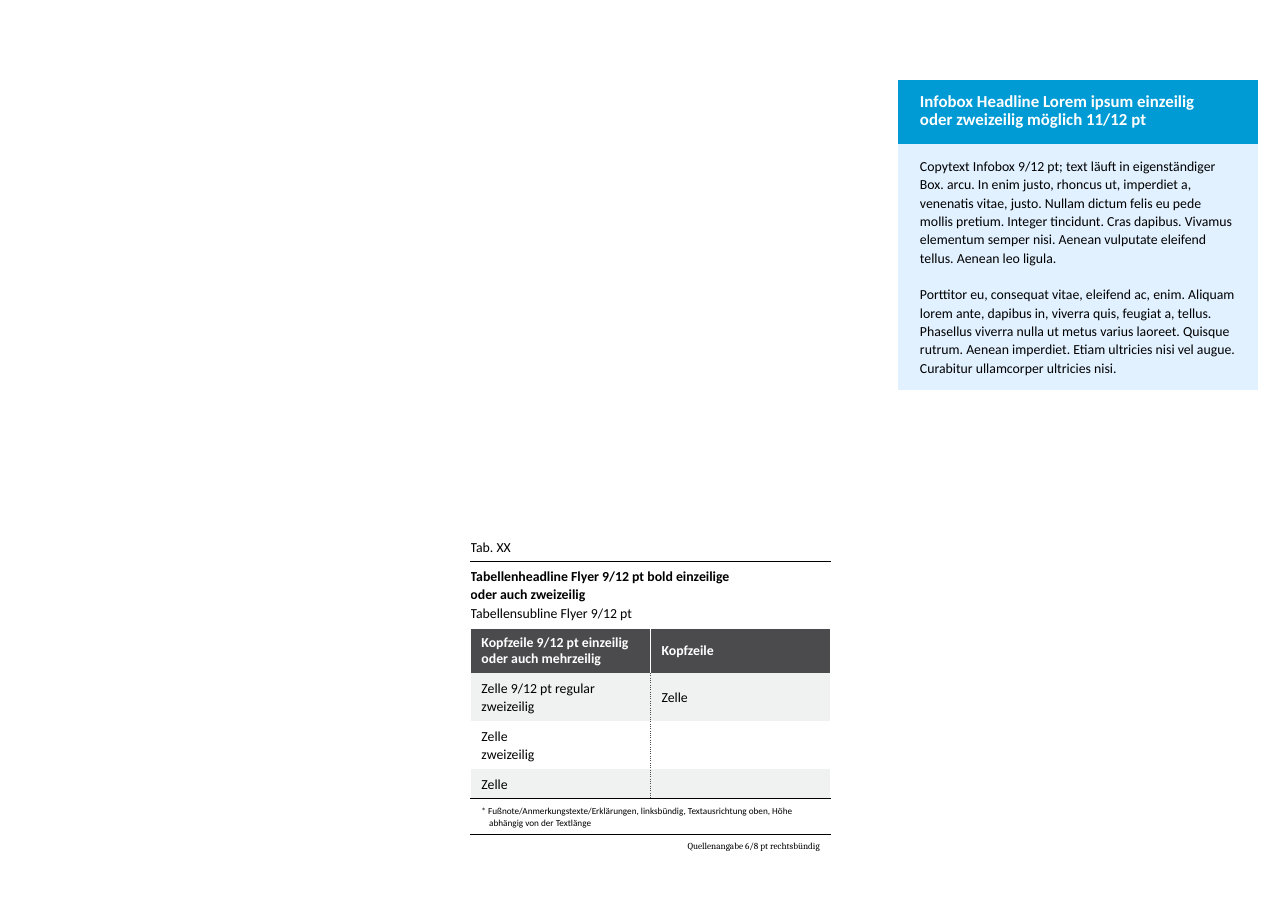
from lxml import etree
from pptx import Presentation
from pptx.dml.color import RGBColor
from pptx.enum.text import MSO_ANCHOR as Anchor, PP_ALIGN as Align
from pptx.oxml.ns import qn
from pptx.util import Inches, Pt

COLORS = {
    "black": "000000", "white": "FFFFFF", "dark": "4B4B4D", "band": "F0F1F1",
    "blue": "009BD5", "pale": "E1F1FF",
}
WHITE = ("white", 1, "solid")
RULE = ("black", 1, "solid")
THIN = ("black", 0.5, "solid")
HEAD = ("white", 0.75, "solid")
DOTS = ("dark", 0.5, "dot")


def style_cell(cell, fill=None, borders=None, insets=(0.1, 0.05), anchor=Anchor.TOP):
    cell.margin_left = cell.margin_right = Inches(insets[0])
    cell.margin_top = cell.margin_bottom = Inches(insets[1])
    cell.vertical_anchor = anchor
    properties = cell._tc.get_or_add_tcPr()
    for side in "LRTB":
        line = etree.SubElement(properties, qn(f"a:ln{side}"))
        if side in (borders or {}):
            color, width, dash = borders[side]
            line.set("w", str(Pt(width)))
            solid = etree.SubElement(line, qn("a:solidFill"))
            etree.SubElement(solid, qn("a:srgbClr"), val=COLORS[color])
            etree.SubElement(line, qn("a:prstDash"), val="sysDot" if dash == "dot" else dash)
        else:
            etree.SubElement(line, qn("a:noFill"))
    if fill:
        cell.fill.solid()
        cell.fill.fore_color.rgb = RGBColor.from_string(COLORS[fill])
    else:
        cell.fill.background()


def write_cell(cell, lines, size=9, color="black", bold=0, spacing=12, font="Calibri", gap=0):
    frame = cell.text_frame
    for index, text in enumerate(lines):
        para = frame.add_paragraph() if index else frame.paragraphs[0]
        if spacing:
            para.line_spacing = Pt(spacing)
        if index < len(lines) - 1:
            para.space_after = Pt(gap)
        if not text:
            etree.SubElement(para._p, qn("a:endParaRPr"), sz=str(size * 100))
            continue
        span = para.add_run()
        span.text = text
        span.font.name = font
        span.font.size = Pt(size)
        span.font.bold = index < bold
        span.font.color.rgb = RGBColor.from_string(COLORS[color])


deck = Presentation()
deck.slide_width, deck.slide_height = Inches(11.69), Inches(8.27)
page = deck.slides.add_slide(deck.slide_layouts[6])

flyer = page.shapes.add_table(8, 2, Inches(4.27), Inches(4.83), Inches(3.27), Inches(2.99)).table
for row, height in zip(flyer.rows, [0.26, 0.61, 0.4, 0.43, 0.44, 0.26, 0.32, 0.27]):
    row.height = Inches(height)

wide_rows = {
    0: (["Tab. XX"], {"B": RULE}, 0, {}),
    1: (["Tabellenheadline Flyer 9/12 pt bold einzeilige", "oder auch zweizeilig",
         "Tabellensubline Flyer 9/12 pt"], {"T": RULE}, 0, {"bold": 2}),
    6: (["* Fußnote/Anmerkungstexte/Erklärungen, linksbündig, Textausrichtung oben, "
         "Höhe abhängig von der Textlänge"], {"T": THIN, "B": RULE}, 0.1,
        {"size": 6, "spacing": 8}),
    7: (["Quellenangabe 6/8 pt rechtsbündig"], {"T": RULE}, 0.1,
        {"size": 6, "spacing": 8, "font": "Cambria"}),
}
for number, (lines, rules, inset, text_style) in wide_rows.items():
    first, second = flyer.cell(number, 0), flyer.cell(number, 1)
    first.merge(second)
    for cell in (first, second):
        style_cell(cell, borders={"L": WHITE, "R": WHITE, **rules}, insets=(inset, 0.05))
    write_cell(first, lines, **text_style)

footnote = flyer.cell(6, 0).text_frame.paragraphs[0]._p.get_or_add_pPr()
footnote.set("marL", str(Inches(0.07)))
footnote.set("indent", str(Inches(-0.07)))
flyer.cell(7, 0).text_frame.paragraphs[0].alignment = Align.RIGHT

header_style = {"color": "white", "bold": 2, "spacing": None}
body_rows = [
    (["Kopfzeile 9/12 pt einzeilig", "oder auch mehrzeilig"], ["Kopfzeile"], "dark", HEAD, header_style),
    (["Zelle 9/12 pt regular", "zweizeilig"], ["Zelle"], "band", DOTS, {}),
    (["Zelle", "zweizeilig"], [""], "white", DOTS, {}),
    (["Zelle"], [""], "band", DOTS, {}),
]
for number, (left, right, fill, divider, text_style) in enumerate(body_rows, 2):
    bottom = {"B": THIN} if number == 5 else {}
    sides = [{"L": WHITE, "R": divider}, {"L": divider, "R": WHITE}]
    for column, lines in enumerate([left, right]):
        cell = flyer.cell(number, column)
        style_cell(cell, fill, {**sides[column], **bottom}, anchor=Anchor.MIDDLE)
        write_cell(cell, lines, **text_style)

infobox = page.shapes.add_table(2, 1, Inches(8.15), Inches(0.73), Inches(3.27), Inches(2.8)).table
infobox.rows[0].height, infobox.rows[1].height = Inches(0.56), Inches(2.24)
headline, copytext = infobox.cell(0, 0), infobox.cell(1, 0)
style_cell(headline, "blue", insets=(0.2, 0.12), anchor=Anchor.MIDDLE)
write_cell(headline, ["Infobox Headline Lorem ipsum einzeilig", "oder zweizeilig möglich 11/12 pt"],
           size=11, color="white", bold=2)
style_cell(copytext, "pale", insets=(0.2, 0.12))
write_cell(copytext, [
    "Copytext Infobox 9/12 pt; text läuft in eigenständiger Box. arcu. In enim justo, rhoncus ut, "
    "imperdiet a, venenatis vitae, justo. Nullam dictum felis eu pede mollis pretium. Integer "
    "tincidunt. Cras dapibus. Vivamus elementum semper nisi. Aenean vulputate eleifend tellus. "
    "Aenean leo ligula.",
    "Porttitor eu, consequat vitae, eleifend ac, enim. Aliquam lorem ante, dapibus in, viverra quis, "
    "feugiat a, tellus. Phasellus viverra nulla ut metus varius laoreet. Quisque rutrum. Aenean "
    "imperdiet. Etiam ultricies nisi vel augue. Curabitur ullamcorper ultricies nisi.",
], gap=12)

deck.save("out.pptx")
